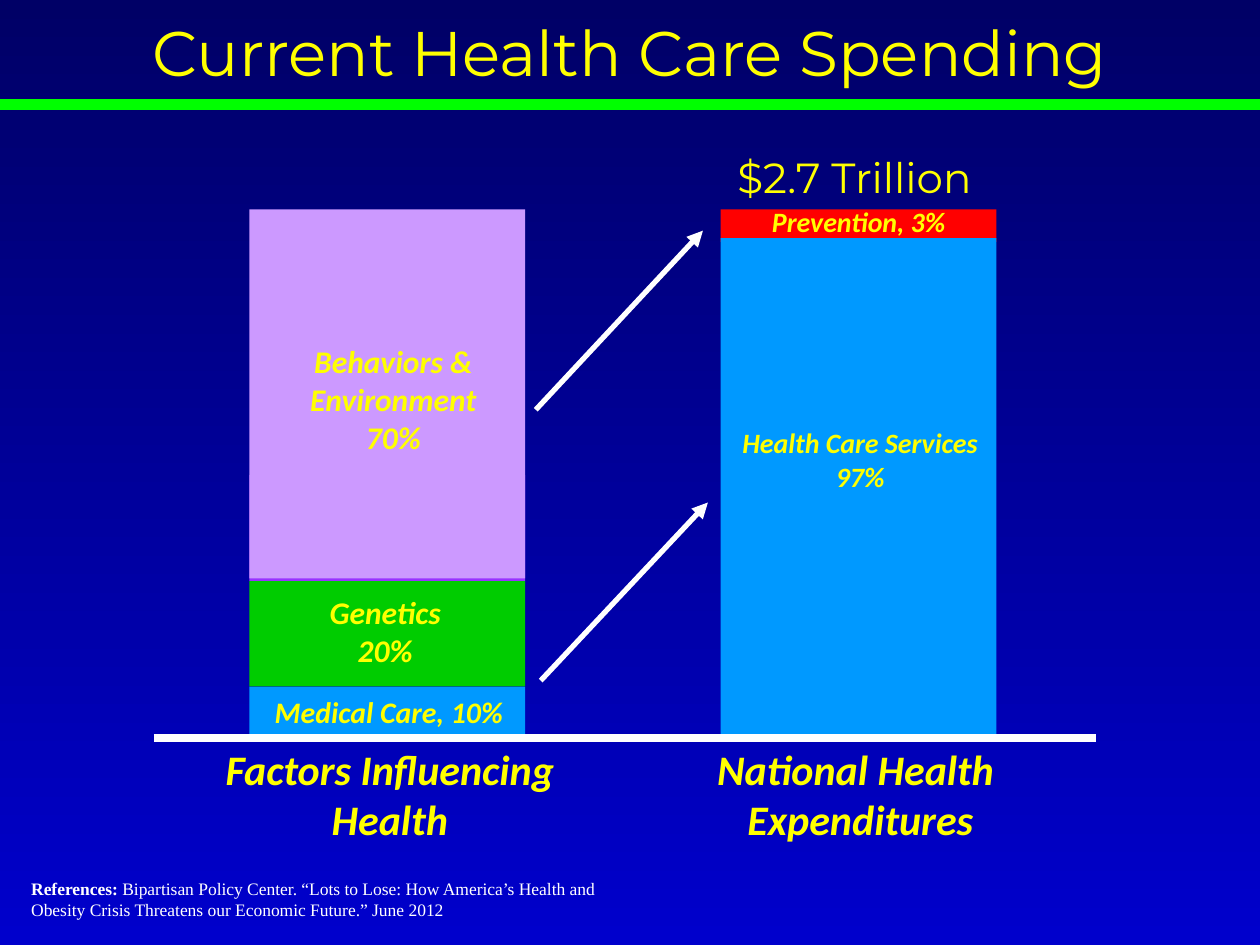
import pptx
import pptx.dml.color
import pptx.enum.shapes
import pptx.enum.text
import pptx.oxml.ns
import pptx.util
from lxml import etree
from pptx.util import Cm

YELLOW = "FFFF00"
WHITE = "FFFFFF"
BLUE = "0099FF"


def color(hex_string):
    return pptx.dml.color.RGBColor.from_string(hex_string)


def write_text(frame, text, size=18, font="Calibri", fill=YELLOW, bold=True,
               italic=True, align="CENTER", wrap=True, margins=True):
    """Fill a text frame; a newline starts a paragraph, a vertical tab breaks a line."""
    frame.text = text
    frame.word_wrap = wrap
    frame.auto_size = pptx.enum.text.MSO_AUTO_SIZE.NONE
    frame.vertical_anchor = pptx.enum.text.MSO_ANCHOR.TOP
    if not margins:
        frame.margin_left = frame.margin_right = 0
        frame.margin_top = frame.margin_bottom = 0
    for paragraph in frame.paragraphs:
        paragraph.alignment = pptx.enum.text.PP_ALIGN[align]
        for run in paragraph.runs:
            run.font.name = font
            run.font.size = pptx.util.Pt(size)
            run.font.bold = bold
            run.font.italic = italic
            run.font.color.rgb = color(fill)


presentation = pptx.Presentation()
presentation.slide_width = Cm(25.4)
presentation.slide_height = Cm(19.05)
slide = presentation.slides.add_slide(presentation.slide_layouts[5])

background = slide.background.fill
background.gradient()
background.gradient_angle = 270
for stop, position, shade in zip(background.gradient_stops, (0, 1), ("000066", "0000CC")):
    stop.position = position
    stop.color.rgb = color(shade)

# Title
title = slide.shapes.title
title.left, title.top, title.width, title.height = Cm(0), Cm(0.15), Cm(25.4), Cm(1.78)
write_text(title.text_frame, "Current Health Care Spending", size=36,
           font="Montserrat", bold=False, italic=False)

# Stacked bars: left, top, height, fill
bar_width = 5.56
factors_left, spending_left = 5.03, 14.53
segments = [
    (factors_left, 13.84, 1.04, BLUE),
    (factors_left, 11.71, 2.13, "00CC00"),
    (factors_left, 9.58, 2.13, "9933FF"),
    (factors_left, 4.22, 7.44, "CC99FF"),
    (spending_left, 4.22, 0.66, "FF0000"),
    (spending_left, 4.8, 10.08, BLUE),
]
for left, top, height, fill in segments:
    segment = slide.shapes.add_shape(pptx.enum.shapes.MSO_SHAPE.RECTANGLE,
                                     Cm(left), Cm(top), Cm(bar_width), Cm(height))
    segment.shadow.inherit = False
    segment.fill.solid()
    segment.fill.fore_color.rgb = color(fill)
    segment.line.fill.background()

# Labels: left, top, width, height, text, format
labels = [
    (4.88, 6.78, 6.1, 2.57, "Behaviors & Environment\n70%", {}),
    (4.93, 13.87, 5.82, 0.99, "Medical Care, 10%", {"size": 17, "wrap": False}),
    (6.15, 11.84, 3.23, 1.8, "Genetics\n20%", {"wrap": False}),
    (15.01, 3.99, 4.6, 0.94, "Prevention, 3%", {"size": 16, "wrap": False}),
    (14.66, 8.46, 5.36, 2.31, "Health Care Services\n97%", {"size": 16}),
    (14.2, 2.92, 6.05, 1.27, "$2.7 Trillion",
     {"size": 24, "font": "Montserrat", "bold": False, "italic": False, "wrap": False}),
    (3.81, 14.99, 8.1, 2.03, "Factors Influencing\vHealth", {"size": 24, "margins": False}),
    (14.17, 14.99, 6.35, 2.03, "National Health \vExpenditures",
     {"size": 24, "margins": False}),
    (0.38, 17.58, 12.12, 1.12, "References: ",
     {"size": 10, "font": "Times New Roman", "fill": WHITE, "italic": False, "align": "LEFT"}),
]
for left, top, width, height, text, text_format in labels:
    label = slide.shapes.add_textbox(Cm(left), Cm(top), Cm(width), Cm(height))
    write_text(label.text_frame, text, **text_format)

# The last label is the reference heading; the citation follows it in regular weight
citation = label.text_frame.paragraphs[0].add_run()
citation.text = ("Bipartisan Policy Center. “Lots to Lose: How America’s Health and "
                 "Obesity Crisis Threatens our Economic Future.” June 2012")
citation.font.name = "Times New Roman"
citation.font.size = pptx.util.Pt(10)
citation.font.bold = False
citation.font.color.rgb = color(WHITE)

# Lines: start x, start y, end x, end y, fill, points, arrowhead
lines = [
    (3.1, 14.88, 22.1, 14.88, WHITE, 4.5, False),
    (10.8, 8.26, 14.17, 4.65, WHITE, 3, True),
    (10.9, 13.72, 14.27, 10.13, WHITE, 3, True),
    (0, 2.11, 25.4, 2.11, "00FF00", 6, False),
]
for start_x, start_y, end_x, end_y, fill, points, arrowhead in lines:
    connector = slide.shapes.add_connector(pptx.enum.shapes.MSO_CONNECTOR.STRAIGHT,
                                           Cm(start_x), Cm(start_y), Cm(end_x), Cm(end_y))
    connector.line.color.rgb = color(fill)
    connector.line.width = pptx.util.Pt(points)
    properties = connector.element.spPr
    if arrowhead:
        outline = properties.find(pptx.oxml.ns.qn("a:ln"))
        etree.SubElement(outline, pptx.oxml.ns.qn("a:tailEnd"), type="triangle")
    etree.SubElement(properties, pptx.oxml.ns.qn("a:effectLst"))

presentation.save("out.pptx")
